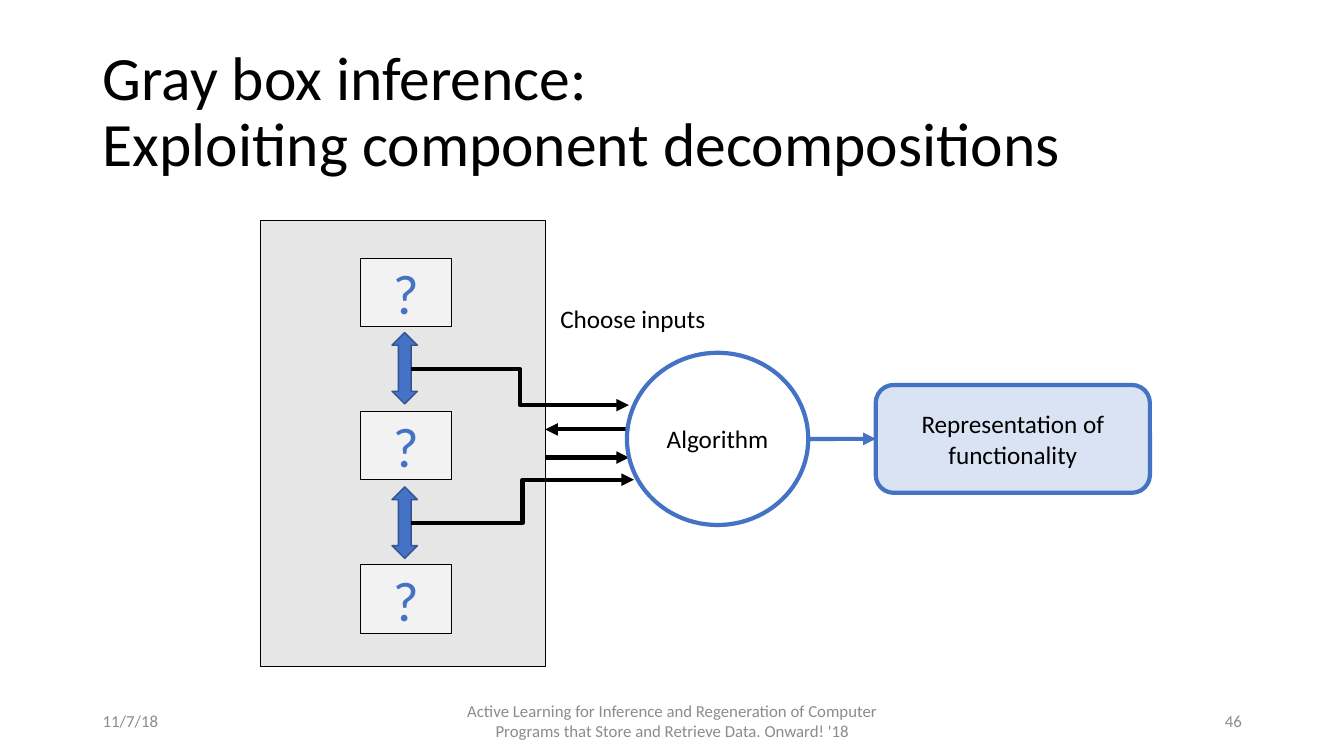
import pptx
import pptx.dml.color
import pptx.enum.shapes
import pptx.enum.text
import pptx.oxml
import pptx.oxml.ns
import pptx.util

Cm, Pt = pptx.util.Cm, pptx.util.Pt
rgb = pptx.dml.color.RGBColor.from_string
Kind = pptx.enum.shapes.MSO_SHAPE
Link = pptx.enum.shapes.MSO_CONNECTOR
Align = pptx.enum.text.PP_ALIGN
BLUE, BLACK, GRAY = "4472C4", "000000", "8C8C8C"

deck = pptx.Presentation()
deck.slide_width, deck.slide_height = Cm(33.87), Cm(19.05)
slide = deck.slides.add_slide(deck.slide_layouts[6])


def draw(box, kind=None, fill=None, line=BLACK, width=0.5,
         text="", size=18, color=BLACK, align=Align.CENTER):
    """Add a filled shape, or a text box when no kind is given."""
    place = [Cm(v) for v in box]
    if kind is None:
        shape = slide.shapes.add_textbox(*place)
    else:
        shape = slide.shapes.add_shape(kind, *place)
        shape.shadow.inherit = False
        shape.fill.solid()
        shape.fill.fore_color.rgb = rgb(fill)
        shape.line.color.rgb = rgb(line)
        shape.line.width = Pt(width)
    if text:
        frame = shape.text_frame
        frame.word_wrap = True
        frame.vertical_anchor = pptx.enum.text.MSO_ANCHOR.MIDDLE
        frame.text = text
        par = frame.paragraphs[0]
        par.alignment = align
        par.font.name = "Calibri"
        par.font.size = Pt(size)
        par.font.color.rgb = rgb(color)
    return shape


def arrow(kind, ends, color=BLACK):
    """Add a thick connector with a triangle at its far end."""
    link = slide.shapes.add_connector(kind, *[Cm(v) for v in ends])
    link.line.color.rgb = rgb(color)
    link.line.width = Pt(3)
    tip = pptx.oxml.parse_xml(
        f'<a:tailEnd {pptx.oxml.ns.nsdecls("a")} type="triangle"/>')
    link.line._get_or_add_ln().append(tip)
    props = link._element.spPr
    props.append(pptx.oxml.parse_xml(
        f'<a:effectLst {pptx.oxml.ns.nsdecls("a")}/>'))
    return link


# Inputs to and outputs from the gray box
arrow(Link.STRAIGHT, (15.85, 10.82, 13.74, 10.82))
arrow(Link.STRAIGHT, (13.74, 11.53, 15.85, 11.53))
draw((6.55, 5.56, 7.19, 11.23), Kind.RECTANGLE, "E7E6E6")

# Title and footer
title = draw((2.34, 1.02, 29.21, 3.68), size=44, align=Align.LEFT,
             text="Gray box inference:\vExploiting component decompositions")
title.text_frame.paragraphs[0].line_spacing = 0.9
venue = ("Active Learning for Inference and Regeneration of Computer "
         "Programs that Store and Retrieve Data. Onward! '18")
for left, wide, text, align in ((2.34, 7.62, "11/7/18", Align.LEFT),
                                (11.23, 11.43, venue, Align.CENTER),
                                (23.93, 7.62, "46", Align.RIGHT)):
    draw((left, 17.65, wide, 1.02), text=text, size=12, color=GRAY, align=align)

# Algorithm and its result
draw((15.8, 8.89, 4.57, 4.34), Kind.OVAL, "FFFFFF", BLUE, 3, "Algorithm")
result = draw((22.07, 9.7, 6.91, 2.72), Kind.ROUNDED_RECTANGLE, "DAE3F3",
              BLUE, 3, "Representation of functionality")
arrow(Link.STRAIGHT, (20.37, 11.06, 22.07, 11.06), BLUE).end_connect(result, 1)

# Unknown components and the traffic between them
for row in range(3):
    draw((9.07, 6.5 + row * 3.86, 2.31, 1.73), Kind.RECTANGLE, "F2F2F2",
         text="?", size=40, color=BLUE)
for row in range(2):
    draw((9.88, 8.38 + row * 3.89, 0.64, 1.8), Kind.UP_DOWN_ARROW, BLUE,
         "325491", 1)
arrow(Link.ELBOW, (10.36, 9.3, 15.85, 10.21))
arrow(Link.ELBOW, (10.36, 13.18, 15.98, 12.09))

label = draw((13.87, 7.52, 4.22, 1.02), text="Choose inputs", align=Align.LEFT)
label.text_frame.word_wrap = False

deck.save("out.pptx")
